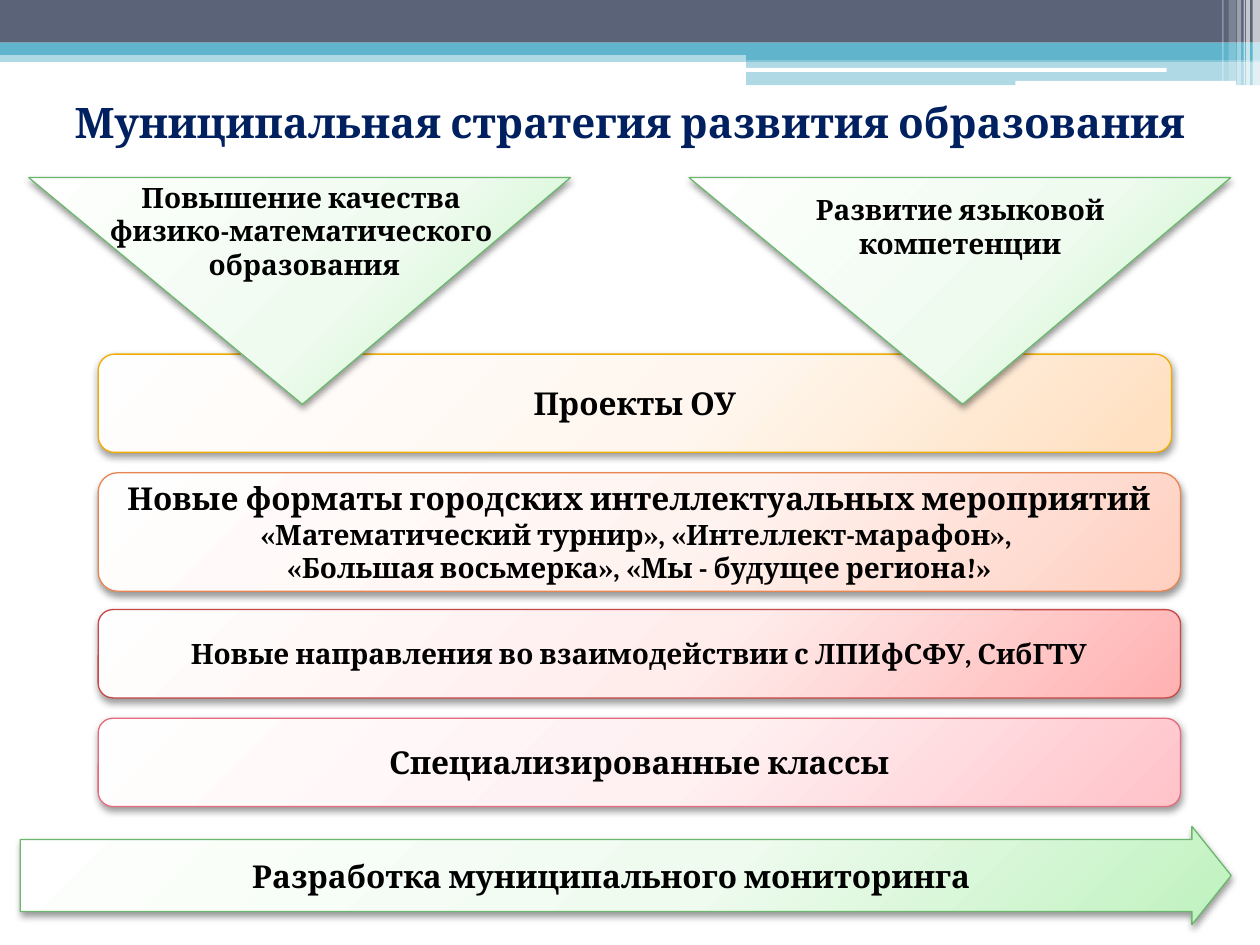
from lxml import etree
from pptx import Presentation
from pptx.dml.color import RGBColor
from pptx.enum.shapes import MSO_SHAPE as SHAPE
from pptx.enum.text import MSO_ANCHOR as ANCHOR, PP_ALIGN as ALIGN
from pptx.oxml import parse_xml
from pptx.oxml.ns import nsdecls, qn
from pptx.util import Cm, Pt

COLORS = {
    "slate": "5A6378", "teal": "60B5CC", "white": "FFFFFF",
    "navy": "002060", "black": "000000",
}
# Line colour, then the gradient from its light to its dark end
THEMES = {
    "amber": ("F0AD00", "FFFEFE", "FFF7EF", "FFDFBE"),
    "orange": ("E88651", "FFFEFE", "FFF3F0", "FFCFC0"),
    "red": ("C64847", "FFFEFE", "FFEDEC", "FFB1B1"),
    "pink": ("E66C7D", "FFFEFE", "FFF0F2", "FFC3C9"),
    "green": ("6BB76D", "FEFFFE", "F0FBF0", "BFF2BF"),
}
STOPS = (0, 55000, 100000)

prs = Presentation()
prs.slide_width, prs.slide_height = Cm(25.4), Cm(19.05)
s = prs.slides.add_slide(prs.slide_layouts[6])


def add_panel(kind, box, theme, adjustments=()):
    """Add a shape with a radial gradient, a thin outline and a soft shadow."""
    line, *shades = THEMES[theme]
    sp = s.shapes.add_shape(kind, *map(Cm, box))
    for i, value in enumerate(adjustments):
        sp.adjustments[i] = value
    sp.line.color.rgb = RGBColor.from_string(line)
    sp.line.width = Pt(0.75)
    sp.shadow.inherit = False
    sp.fill.gradient()
    stops = "".join(f'<a:gs pos="{pos}"><a:srgbClr val="{shade}"/></a:gs>'
                    for pos, shade in zip(STOPS, shades))
    spPr = sp._element.spPr
    spPr.replace(spPr.find(qn("a:gradFill")), parse_xml(
        f'<a:gradFill {nsdecls("a")} rotWithShape="1"><a:gsLst>{stops}</a:gsLst>'
        '<a:path path="circle"><a:fillToRect l="-40000" t="-90000" '
        'r="140000" b="190000"/></a:path></a:gradFill>'))
    spPr.find(qn("a:effectLst")).append(parse_xml(
        f'<a:outerShdw {nsdecls("a")} blurRad="52000" dist="25400" dir="5400000" '
        'rotWithShape="0"><a:srgbClr val="000000"><a:alpha val="40000"/>'
        '</a:srgbClr></a:outerShdw>'))
    return sp


def write(sp, paragraphs, color="black", anchor=ANCHOR.MIDDLE):
    """Fill a shape with centred paragraphs, each a list of (text, size) runs."""
    tf = sp.text_frame
    tf.word_wrap = True
    tf.vertical_anchor = anchor
    for i, runs in enumerate(paragraphs):
        p = tf.paragraphs[0] if i == 0 else tf.add_paragraph()
        p.alignment = ALIGN.CENTER
        for text, size in runs:
            r = p.add_run()
            r.text = text
            for name, value in {"name": "Cambria", "size": Pt(size), "bold": True}.items():
                setattr(r.font, name, value)
            r.font.color.rgb = RGBColor.from_string(COLORS[color])


# Header: bands, thin white bars and the stripes at the right edge
header = [
    (SHAPE.RECTANGLE, (0, 1.02, 25.4, 0.23), "teal", 50),
    (SHAPE.RECTANGLE, (0, 0, 25.4, 0.86), "slate", 100),
    (SHAPE.RECTANGLE, (0, 0.86, 25.4, 0.25), "teal", 100),
    (SHAPE.RECTANGLE, (15.04, 0.99, 10.36, 0.23), "teal", 100),
    (SHAPE.RECTANGLE, (15.04, 1.22, 10.36, 0.5), "teal", 50),
    (SHAPE.ROUNDED_RECTANGLE, (15.01, 1.37, 8.51, 0.08), "white", 100),
    (SHAPE.ROUNDED_RECTANGLE, (20.47, 1.63, 4.45, 0.1), "white", 100),
]
stripes = [
    (25.25, 0.15, 1.73, 65), (25.12, 0.08, 1.73, 65), (25.07, 0.03, 1.73, 60),
    (24.94, 0.08, 1.73, 40), (24.77, 0.15, 1.63, 20), (24.64, 0.03, 1.63, 30),
]
header += [(SHAPE.RECTANGLE, (x, 0, w, h), "white", opacity)
           for x, w, h, opacity in stripes]
for kind, box, color, opacity in header:
    sp = s.shapes.add_shape(kind, *map(Cm, box))
    sp.shadow.inherit = False
    sp.line.fill.background()
    sp.fill.solid()
    sp.fill.fore_color.rgb = RGBColor.from_string(COLORS[color])
    if opacity < 100:
        clr = sp._element.spPr.find(qn("a:solidFill"))[0]
        etree.SubElement(clr, qn("a:alpha")).set("val", str(opacity * 1000))

# The first card lies behind the triangles
sp = add_panel(SHAPE.ROUNDED_RECTANGLE, (1.98, 7.14, 21.64, 1.98), "amber")
write(sp, [[("Проекты ОУ", 18)]])

title = s.shapes.add_textbox(*map(Cm, (0, 1.57, 25.4, 1.78)))
write(title, [[("Муниципальная стратегия развития образования", 24)]], "navy")

# Two goals pointing down at the cards
goals = [
    (0.58, (0.79, 3.51, 10.57, 2.31),
     ["Повышение качества", "физико-математического", " образования"]),
    (13.89, (14.61, 3.76, 9.5, 1.63), ["Развитие языковой компетенции"]),
]
for left, text_box, lines in goals:
    sp = add_panel(SHAPE.ISOSCELES_TRIANGLE, (left, 3.58, 10.92, 4.57), "green", [0.495])
    sp.rotation = 180
    label = s.shapes.add_textbox(*map(Cm, text_box))
    write(label, [[(line, 16)] for line in lines], anchor=ANCHOR.TOP)

cards = [
    (9.53, 2.39, "orange", [
        [("Новые форматы городских интеллектуальных мероприятий ", 18),
         ("«Математический турнир», «Интеллект-марафон», ", 16)],
        [("«Большая восьмерка», «Мы - будущее региона!»", 16)]]),
    (12.29, 1.78, "red",
     [[("Новые направления во взаимодействии с ЛПИфСФУ, СибГТУ", 16)]]),
    (14.48, 1.78, "pink", [[("Специализированные классы", 18)]]),
]
for top, height, theme, paragraphs in cards:
    sp = add_panel(SHAPE.ROUNDED_RECTANGLE, (1.98, top, 21.82, height), theme)
    write(sp, paragraphs)

arrow = add_panel(SHAPE.RIGHT_ARROW, (0.41, 16.66, 24.41, 1.98), "green", [0.733, 0.4])
write(arrow, [[("Разработка муниципального мониторинга", 18)]])

prs.save("out.pptx")
